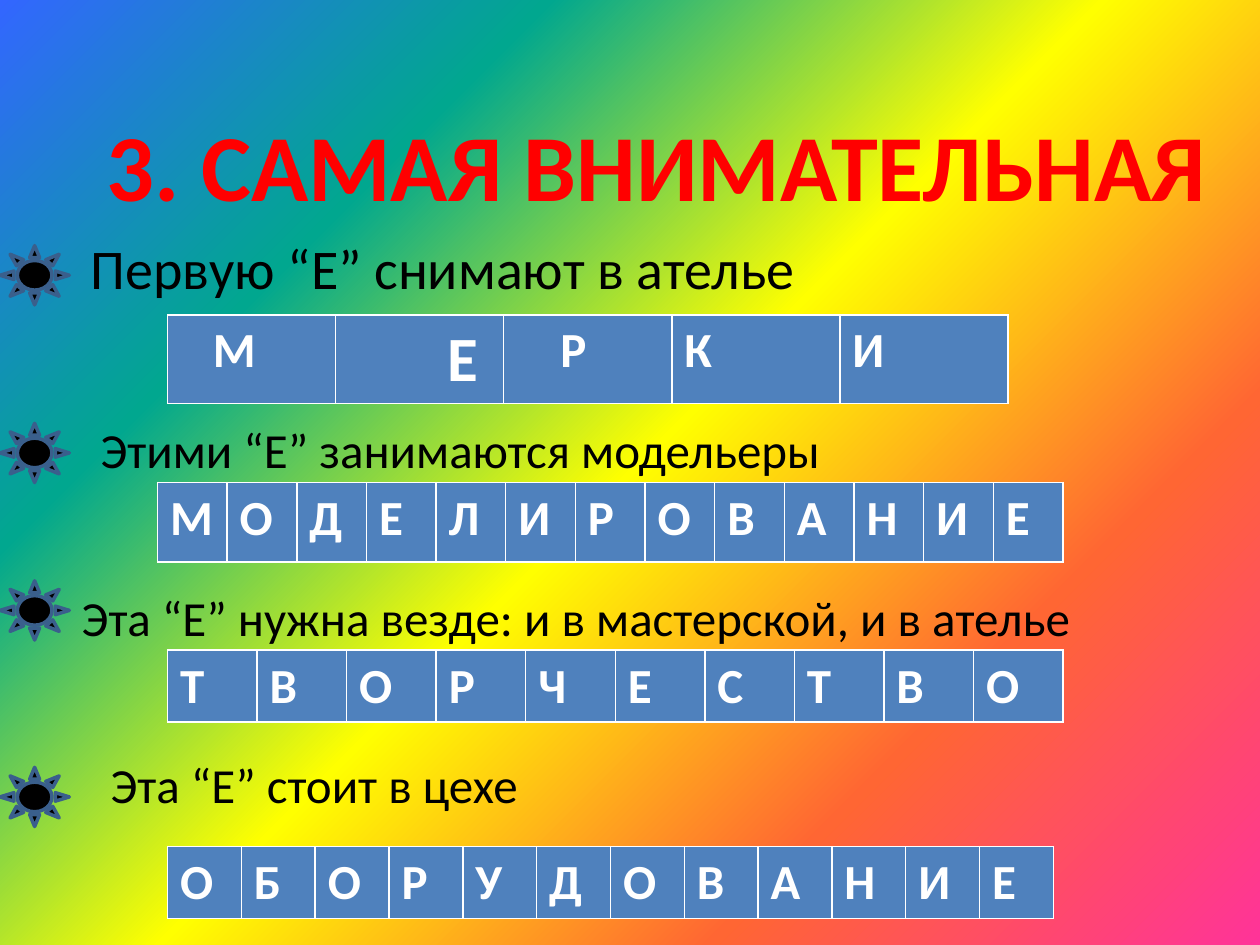
"""Build the word puzzle slide "3. САМАЯ ВНИМАТЕЛЬНАЯ"."""
from lxml import etree
from pptx import Presentation
from pptx.dml.color import RGBColor
from pptx.enum.shapes import MSO_SHAPE
from pptx.enum.text import MSO_ANCHOR, PP_ALIGN
from pptx.oxml import parse_xml
from pptx.oxml.ns import nsdecls, qn
from pptx.util import Inches, Pt

TAPE, SUN = MSO_SHAPE.FLOWCHART_PUNCHED_TAPE, MSO_SHAPE.SUN
TOP, MIDDLE = MSO_ANCHOR.TOP, MSO_ANCHOR.MIDDLE
CENTER, JUSTIFY = PP_ALIGN.CENTER, PP_ALIGN.JUSTIFY
RED = RGBColor(0xFF, 0x00, 0x00)
BLACK = RGBColor(0x00, 0x00, 0x00)
WHITE = RGBColor(0xFF, 0xFF, 0xFF)
CELL_BLUE = RGBColor(0x4F, 0x81, 0xBD)
SUN_EDGE = RGBColor(0x3A, 0x5F, 0x8C)
TITLE_EDGE = RGBColor(0x5E, 0x45, 0x7C)
RAINBOW = [
    RGBColor(0xFF, 0x33, 0x99),
    RGBColor(0xFF, 0x66, 0x33),
    RGBColor(0xFF, 0xFF, 0x00),
    RGBColor(0x01, 0xA7, 0x8F),
    RGBColor(0x33, 0x66, 0xFF),
]


def write(frame, text, size, color, bold=False, align=None):
    frame.text = text
    paragraph = frame.paragraphs[0]
    paragraph.alignment = align
    font = paragraph.runs[0].font
    font.name, font.size, font.bold = "Calibri", Pt(size), bold
    font.color.rgb = color
    return font


prs = Presentation()
prs.slide_width, prs.slide_height = Inches(10), Inches(7.5)
slide = prs.slides.add_slide(prs.slide_layouts[6])

slide.background.fill.gradient()
background = slide.element.find(".//" + qn("p:bgPr"))
stops = "".join(
    f'<a:gs pos="{i * 25000}"><a:srgbClr val="{color}"/></a:gs>'
    for i, color in enumerate(RAINBOW)
)
background.replace(
    background.find(qn("a:gradFill")),
    parse_xml(
        f'<a:gradFill {nsdecls("a")} rotWithShape="1"><a:gsLst>{stops}</a:gsLst>'
        '<a:path path="circle"><a:fillToRect l="100000" t="100000"/></a:path>'
        '<a:tileRect r="-100000" b="-100000"/></a:gradFill>'
    ),
)

title = slide.shapes.add_shape(TAPE, Inches(0.7), Inches(0.47), Inches(9.02), Inches(1.67))
title.shadow.inherit = False
title.fill.background()
title.line.fill.background()
title.text_frame.word_wrap = False
title.text_frame.vertical_anchor = TOP
write(title.text_frame, "3. САМАЯ ВНИМАТЕЛЬНАЯ", 54, RED, True, CENTER)
title_run = title.text_frame.paragraphs[0].runs[0]._r.get_or_add_rPr()
outline = etree.Element(qn("a:ln"), w=str(Pt(0.71)))
outline_fill = etree.SubElement(outline, qn("a:solidFill"))
etree.SubElement(outline_fill, qn("a:srgbClr"), val=str(TITLE_EDGE))
title_run.insert(0, outline)

# clue, clue size, clue box, answer, answer box, sun top
puzzles = [
    ("Первую “Е” снимают в ателье", 32, (0.62, 1.8, 6.08, 0.64),
     "МЕРКИ", (1.33, 2.5, 6.67, 0.7), 1.95),
    ("Этими “Е” занимаются модельеры", 28, (0.7, 3.28, 6.18, 0.57),
     "МОДЕЛИРОВАНИЕ", (1.25, 3.83, 7.19, 0.63), 3.36),
    ("Эта “Е” нужна везде: и в мастерской, и в ателье", 28, (0.55, 4.61, 8.49, 0.57),
     "ТВОРЧЕСТВО", (1.33, 5.16, 7.11, 0.57), 4.61),
    ("Эта “Е” стоит в цехе", 28, (0.78, 5.94, 3.68, 0.57),
     "ОБОРУДОВАНИЕ", (1.33, 6.72, 7.03, 0.57), 6.09),
]
first_answer_indents = [0.26, 0.79, 0.35]

for clue, clue_size, clue_box, answer, answer_box, sun_top in puzzles:
    clue_frame = slide.shapes.add_textbox(*map(Inches, clue_box)).text_frame
    clue_frame.word_wrap = True
    clue_frame.vertical_anchor = MIDDLE
    write(clue_frame, clue, clue_size, BLACK, align=JUSTIFY)

    grid = slide.shapes.add_table(1, len(answer), *map(Inches, answer_box)).table
    grid.horz_banding = False
    for cell, letter in zip(grid.rows[0].cells, answer):
        cell.fill.solid()
        cell.fill.fore_color.rgb = CELL_BLUE
        write(cell.text_frame, letter, 28, WHITE, True)
    if answer == "МЕРКИ":
        for cell, indent in zip(grid.rows[0].cells, first_answer_indents):
            cell.margin_left = Inches(0.1 + indent)
        grid.cell(0, 1).text_frame.paragraphs[0].runs[0].font.size = Pt(36)

    sun = slide.shapes.add_shape(SUN, Inches(0), Inches(sun_top), Inches(0.55), Inches(0.47))
    sun.shadow.inherit = False
    sun.fill.solid()
    sun.fill.fore_color.rgb = BLACK
    sun.line.color.rgb = SUN_EDGE
    sun.line.width = Pt(2)

prs.save("out.pptx")
